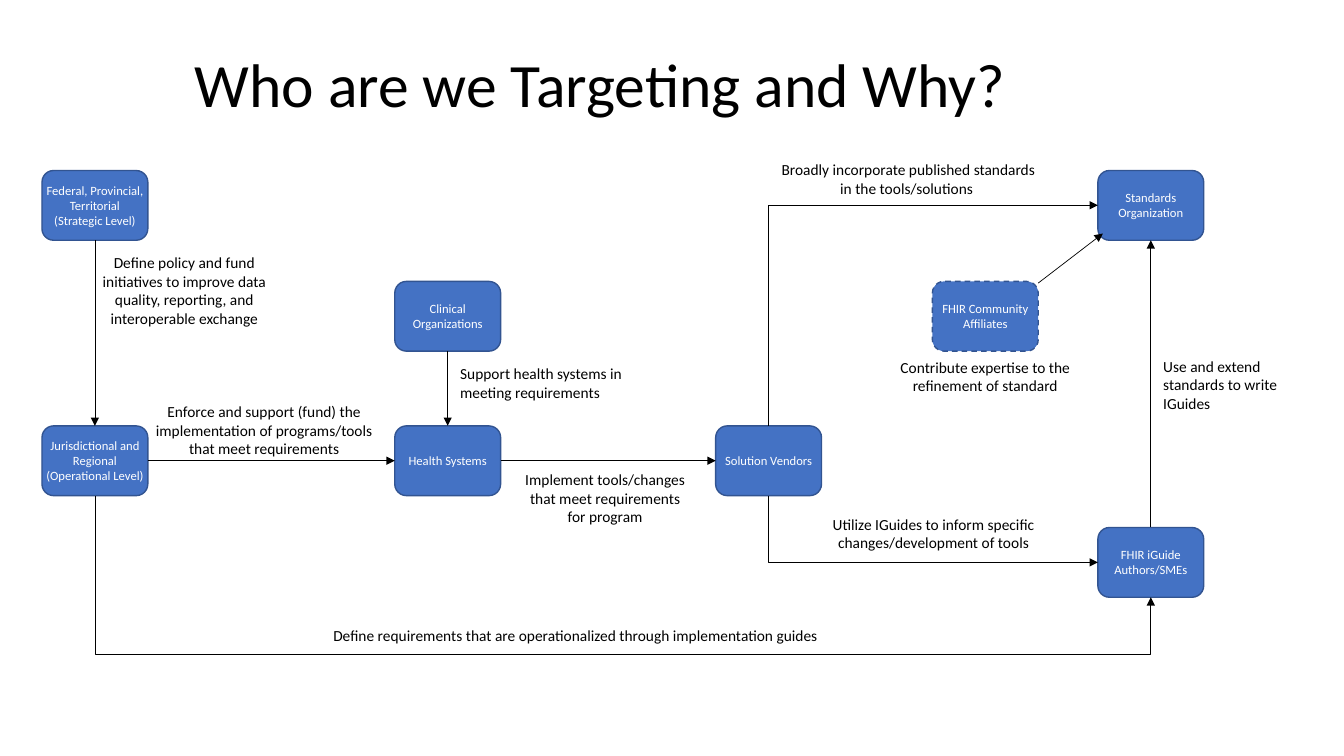
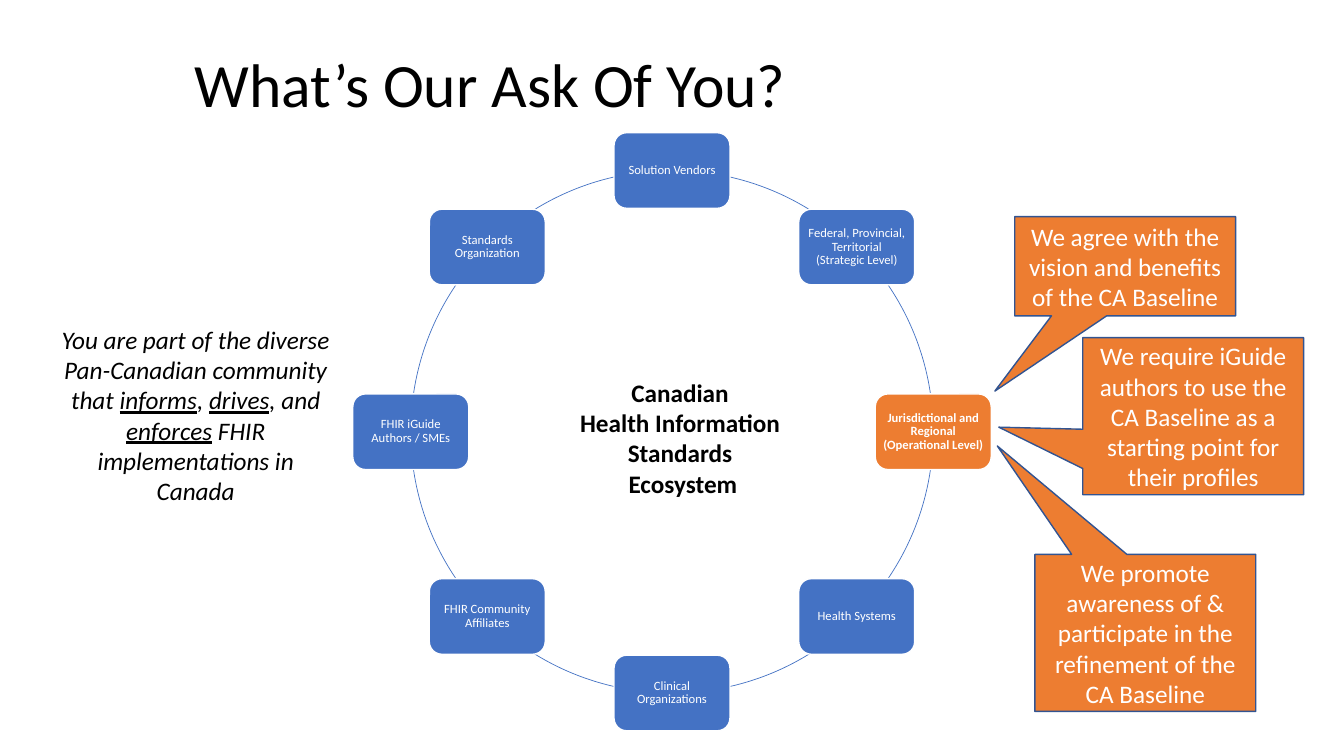
"""Build two slides on the health information standards ecosystem."""
import math
from dataclasses import dataclass
from typing import Optional

import pptx
import pptx.dml.color
import pptx.enum.dml
import pptx.enum.shapes
import pptx.enum.text
import pptx.oxml
import pptx.oxml.ns
import pptx.shapes.autoshape
import pptx.shapes.base
import pptx.shapes.connector
import pptx.slide
import pptx.util

COLORS = {"blue": "4472C4", "edge": "325491", "orange": "ED7D31", "white": "FFFFFF", "black": "000000"}
FONT = "Calibri"
COLUMNS, ROWS = 160, 90
CELL = pptx.util.Inches(1) / 12
SHAPES = pptx.enum.shapes.MSO_SHAPE
CONNECTORS = pptx.enum.shapes.MSO_CONNECTOR
MIDDLE = pptx.enum.text.MSO_ANCHOR.MIDDLE
CENTER = pptx.enum.text.PP_ALIGN.CENTER
LEFT = pptx.enum.text.PP_ALIGN.LEFT
TOP_SITE, LEFT_SITE, BOTTOM_SITE, RIGHT_SITE = range(4)


@dataclass(frozen=True)
class Area:
    """A rectangle in grid cells."""

    column: float
    row: float
    columns: float
    rows: float


@dataclass(frozen=True)
class Style:
    """How a block of text looks."""

    size: float
    color: str = "black"
    bold: bool = False
    italic: bool = False
    align: pptx.enum.text.PP_ALIGN = CENTER
    spacing: float = 1.0


@dataclass(frozen=True)
class Actor:
    """A box of the flow diagram."""

    text: str
    column: float
    row: float
    dashed: bool = False


@dataclass(frozen=True)
class Label:
    """A caption beside an arrow."""

    text: str
    area: Area
    align: pptx.enum.text.PP_ALIGN = CENTER


@dataclass(frozen=True)
class Link:
    """An arrow between two actors."""

    start: str
    start_site: int
    end: str
    end_site: int
    bend: str = ""
    reach: Optional[float] = None


@dataclass(frozen=True)
class Callout:
    """A speech box whose tip is given as shares of its size."""

    text: str
    area: Area
    tip: tuple[float, float]


TITLE_AREA = Area(22, 1.7, 138, 17.4)
ACTOR_SIZE = (12.6, 8.3)
FIRST, SECOND, THIRD, FOURTH = 5, 47, 85.2, 130.7
UPPER, INNER, MAIN, LOWER = 20.3, 33.5, 50.7, 62.8
ACTORS = {
    "vendors": Actor("Solution Vendors", THIRD, MAIN),
    "standards": Actor("Standards Organization", FOURTH, UPPER),
    "authors": Actor("FHIR iGuide Authors/SMEs", FOURTH, LOWER),
    "health": Actor("Health Systems", SECOND, MAIN),
    "regional": Actor("Jurisdictional and Regional (Operational Level)", FIRST, MAIN),
    "affiliates": Actor("FHIR Community Affiliates", 111, INNER, dashed=True),
    "clinical": Actor("Clinical Organizations", SECOND, INNER),
    "federal": Actor("Federal, Provincial, Territorial (Strategic Level)", FIRST, UPPER),
}
LABELS = [
    Label("Define policy and fund initiatives to improve data quality, reporting, and interoperable exchange",
          Area(9.7, 29.6, 24.5, 10.1)),
    Label("Use and extend standards to write IGuides", Area(137.3, 41.9, 19, 7.9), LEFT),
    Label("Define requirements that are operationalized through implementation guides",
          Area(38.5, 73.9, 61.9, 3.5), LEFT),
    Label("Enforce and support (fund) the implementation of programs/tools that meet requirements",
          Area(16.4, 47.3, 30.1, 7.9)),
    Label("Implement tools/changes that meet requirements for program", Area(61, 55.4, 22.1, 7.9)),
    Label("Broadly incorporate published standards in the tools/solutions ", Area(91.4, 18.5, 33.5, 5.6)),
    Label("Utilize IGuides to inform specific changes/development of tools", Area(91.6, 60.7, 39.1, 5.6)),
    Label("Support health systems in meeting requirements", Area(53.6, 42.8, 23.5, 5.6), LEFT),
    Label("Contribute expertise to the refinement of standard", Area(104.5, 42, 25.6, 5.6)),
]
LINKS = [
    Link("regional", RIGHT_SITE, "health", LEFT_SITE),
    Link("federal", BOTTOM_SITE, "regional", TOP_SITE),
    Link("regional", BOTTOM_SITE, "authors", BOTTOM_SITE, "bentConnector3", 1.56),
    Link("health", RIGHT_SITE, "vendors", LEFT_SITE),
    Link("authors", TOP_SITE, "standards", BOTTOM_SITE),
    Link("vendors", TOP_SITE, "standards", LEFT_SITE, "bentConnector2"),
    Link("vendors", BOTTOM_SITE, "authors", LEFT_SITE, "bentConnector2"),
    Link("clinical", BOTTOM_SITE, "health", TOP_SITE),
]
AFFILIATE_ARROW = (123.6, 33.7, 131.3, 27.8)

RING_CENTER, RING_RADIUS = (80, 51.4), 31.1
MEMBER_SIZE = (13.8, 9)
HIGHLIGHT = "Jurisdictional and Regional (Operational Level)"
MEMBERS = [
    "Solution Vendors", "Federal, Provincial, Territorial (Strategic Level)", HIGHLIGHT, "Health Systems",
    "Clinical Organizations", "FHIR Community Affiliates", "FHIR iGuide Authors / SMEs", "Standards Organization",
]
CALLOUTS = [
    Callout("We agree with the vision and benefits of the CA Baseline",
            Area(120.8, 25.8, 26.3, 11.8), (-0.59, 1.26)),
    Callout("We require iGuide authors to use the CA Baseline as a starting point for their profiles",
            Area(128.9, 40.2, 26.3, 18.7), (-0.88, 0.07)),
    Callout("We promote awareness of & participate in the refinement of the CA Baseline",
            Area(123.2, 66, 26.3, 18.7), (-0.67, -1.19)),
]
COMMUNITY = ["You are part of the diverse Pan-Canadian community that ", "informs", ", ", "drives", ", and ",
             "enforces", " FHIR implementations in Canada"]
UNDERLINED = {"informs", "drives", "enforces"}


def cells(count: float) -> int:
    """Turn grid cells into a length."""
    return round(count * CELL)


def frame(area: Area) -> tuple[int, int, int, int]:
    """Turn an area into left, top, width and height."""
    return cells(area.column), cells(area.row), cells(area.columns), cells(area.rows)


def rgb(name: str) -> pptx.dml.color.RGBColor:
    """Look up a colour by name."""
    return pptx.dml.color.RGBColor.from_string(COLORS[name])


def format_text(shape: pptx.shapes.base.BaseShape, style: Style) -> None:
    """Apply a style to all text of a shape."""
    shape.text_frame.word_wrap = True
    for para in shape.text_frame.paragraphs:
        para.alignment = style.align
        para.line_spacing = style.spacing
        for span in para.runs:
            span.font.name = FONT
            span.font.size = pptx.util.Pt(style.size)
            span.font.bold = style.bold
            span.font.italic = style.italic
            span.font.color.rgb = rgb(style.color)


def add_text(page: pptx.slide.Slide, area: Area, text: str, style: Style) -> pptx.shapes.autoshape.Shape:
    """Add a plain text box."""
    box = page.shapes.add_textbox(*frame(area))
    box.text_frame.text = text
    format_text(box, style)
    return box


def add_box(page: pptx.slide.Slide, preset: SHAPES, area: Area, text: str, style: Style,
            fill: str, edge: str) -> pptx.shapes.autoshape.Shape:
    """Add a filled shape with centred text."""
    box = page.shapes.add_shape(preset, *frame(area))
    box.shadow.inherit = False
    box.fill.solid()
    box.fill.fore_color.rgb = rgb(fill)
    box.line.color.rgb = rgb(edge)
    box.line.width = pptx.util.Pt(1)
    box.text_frame.text = text
    box.text_frame.vertical_anchor = MIDDLE
    format_text(box, style)
    return box


def set_side_margins(box: pptx.shapes.autoshape.Shape, columns: float) -> None:
    """Set equal left and right text margins."""
    box.text_frame.margin_left = box.text_frame.margin_right = cells(columns)


def finish_arrow(arrow: pptx.shapes.connector.Connector) -> None:
    """Give a connector a thin black line, an arrowhead and no shadow."""
    arrow.line.color.rgb = rgb("black")
    arrow.line.width = pptx.util.Pt(0.5)
    head = pptx.oxml.parse_xml(f'<a:tailEnd {pptx.oxml.ns.nsdecls("a")} type="triangle"/>')
    arrow.line._get_or_add_ln().append(head)
    arrow._element.spPr.append(pptx.oxml.parse_xml(f'<a:effectLst {pptx.oxml.ns.nsdecls("a")}/>'))


def bend_arrow(arrow: pptx.shapes.connector.Connector, link: Link) -> None:
    """Turn an elbow connector so that it leaves its start vertically."""
    rising = arrow.end_y < arrow.begin_y
    middle_x, middle_y = (arrow.begin_x + arrow.end_x) // 2, (arrow.begin_y + arrow.end_y) // 2
    width, height = abs(arrow.end_y - arrow.begin_y), abs(arrow.end_x - arrow.begin_x)
    arrow.left, arrow.top = middle_x - width // 2, middle_y - height // 2
    arrow.width, arrow.height = width, height
    properties = arrow._element.spPr
    transform = properties.find(pptx.oxml.ns.qn("a:xfrm"))
    transform.set("rot", str((90 if rising else 270) * 60000))
    transform.set("flipH", "1")
    transform.set("flipV", "1" if rising else "0")
    geometry = properties.find(pptx.oxml.ns.qn("a:prstGeom"))
    geometry.set("prst", link.bend)
    if link.reach is not None:
        guide = (f'<a:gd {pptx.oxml.ns.nsdecls("a")} name="adj1" '
                 f'fmla="val {round(link.reach * 100000)}"/>')
        geometry.find(pptx.oxml.ns.qn("a:avLst")).append(pptx.oxml.parse_xml(guide))


def add_page(deck: pptx.presentation.Presentation, title: str) -> pptx.slide.Slide:
    """Add a blank slide with the shared title."""
    page = deck.slides.add_slide(deck.slide_layouts[6])
    box = add_text(page, TITLE_AREA, title, Style(44, align=LEFT, spacing=0.9))
    box.text_frame.vertical_anchor = MIDDLE
    return page


def build_targets(deck: pptx.presentation.Presentation) -> None:
    """Build the flow diagram of actors."""
    page = add_page(deck, "Who are we Targeting and Why?")
    boxes = {}
    for key, actor in ACTORS.items():
        box = add_box(page, SHAPES.ROUNDED_RECTANGLE, Area(actor.column, actor.row, *ACTOR_SIZE),
                      actor.text, Style(9, "white"), "blue", "edge")
        set_side_margins(box, 0)
        if actor.dashed:
            box.line.dash_style = pptx.enum.dml.MSO_LINE.DASH
        boxes[key] = box
    for label in LABELS:
        add_text(page, label.area, label.text, Style(11, align=label.align))
    for link in LINKS:
        kind = CONNECTORS.ELBOW if link.bend else CONNECTORS.STRAIGHT
        arrow = page.shapes.add_connector(kind, 0, 0, 0, 0)
        arrow.begin_connect(boxes[link.start], link.start_site)
        arrow.end_connect(boxes[link.end], link.end_site)
        if link.bend:
            bend_arrow(arrow, link)
        finish_arrow(arrow)
    finish_arrow(page.shapes.add_connector(CONNECTORS.STRAIGHT, *map(cells, AFFILIATE_ARROW)))


def build_ask(deck: pptx.presentation.Presentation) -> None:
    """Build the ring of members with its callouts."""
    page = add_page(deck, "What’s Our Ask Of You?")
    center_x, center_y = RING_CENTER
    ring = page.shapes.add_shape(SHAPES.OVAL, *frame(
        Area(center_x - RING_RADIUS, center_y - RING_RADIUS, 2 * RING_RADIUS, 2 * RING_RADIUS)))
    ring.shadow.inherit = False
    ring.fill.background()
    ring.line.color.rgb = rgb("blue")
    ring.line.width = pptx.util.Pt(0.5)
    width, height = MEMBER_SIZE
    for index, member in enumerate(MEMBERS):
        angle = math.tau * index / len(MEMBERS)
        area = Area(center_x + RING_RADIUS * math.sin(angle) - width / 2,
                    center_y - RING_RADIUS * math.cos(angle) - height / 2, width, height)
        chosen = member == HIGHLIGHT
        box = add_box(page, SHAPES.ROUNDED_RECTANGLE, area, member,
                      Style(9, "white", bold=chosen, spacing=0.9), "orange" if chosen else "blue", "white")
        set_side_margins(box, 0.5)
    for callout in CALLOUTS:
        box = add_box(page, SHAPES.RECTANGULAR_CALLOUT, callout.area, callout.text,
                      Style(18, "white"), "orange", "edge")
        box.adjustments[0], box.adjustments[1] = callout.tip
    community = add_text(page, Area(6, 38, 34.6, 23), "", Style(18))
    for part in COMMUNITY:
        span = community.text_frame.paragraphs[0].add_run()
        span.text = part
        span.font.underline = part in UNDERLINED
    format_text(community, Style(18, italic=True))
    add_text(page, Area(61.2, 44.3, 40.2, 15.7),
             "Canadian \nHealth Information \nStandards \nEcosystem", Style(18, bold=True))


def main() -> None:
    """Build and save the deck."""
    deck = pptx.Presentation()
    deck.slide_width, deck.slide_height = cells(COLUMNS), cells(ROWS)
    build_targets(deck)
    build_ask(deck)
    deck.save("out.pptx")


if __name__ == "__main__":
    main()
